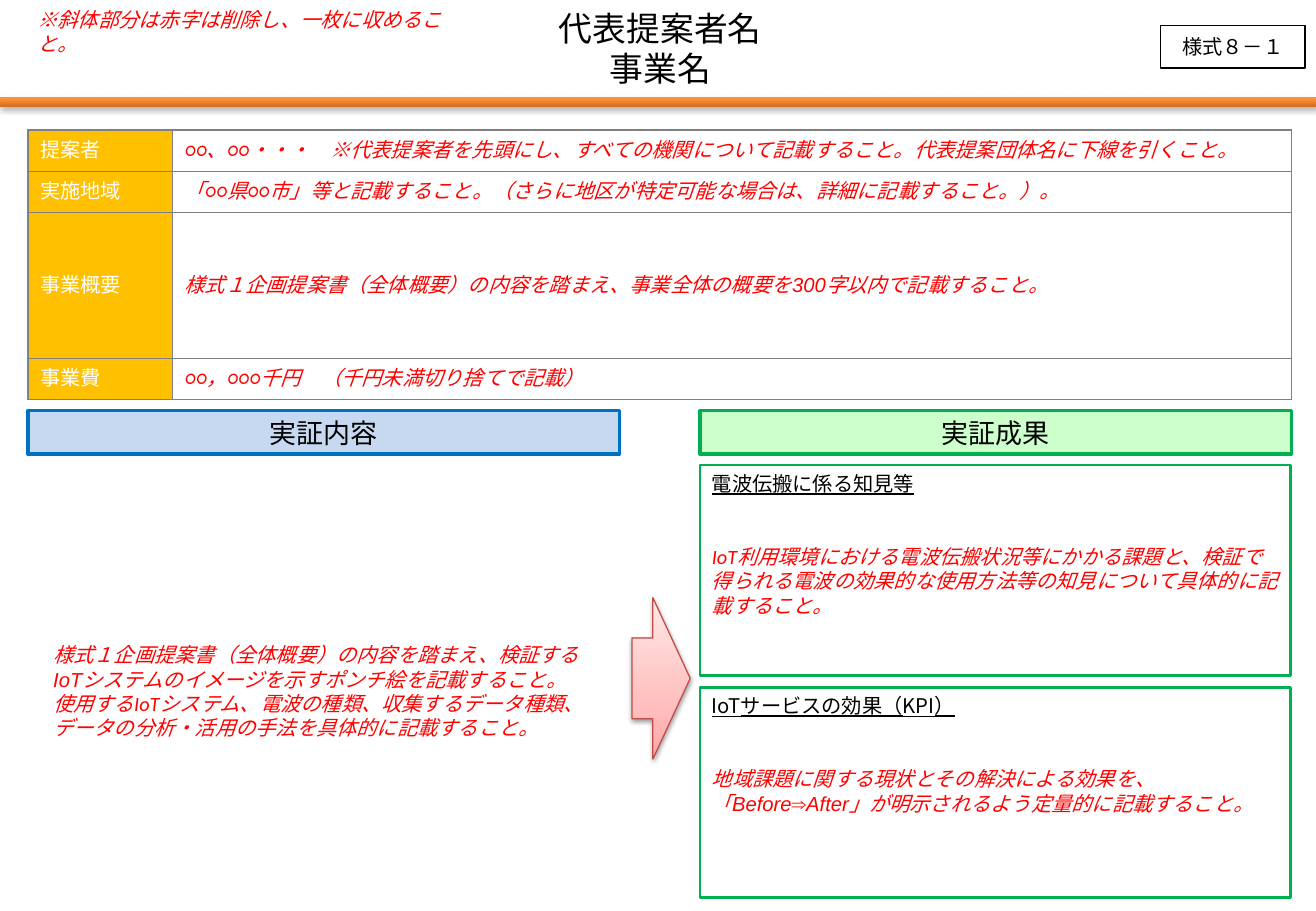
from dataclasses import dataclass
from typing import NamedTuple

from lxml.etree import SubElement
from pptx import Presentation
from pptx.dml.color import RGBColor
from pptx.enum.lang import MSO_LANGUAGE_ID as Language
from pptx.enum.shapes import MSO_SHAPE as ShapeKind
from pptx.enum.text import MSO_ANCHOR as Anchor, MSO_AUTO_SIZE as AutoSize, PP_ALIGN as Align
from pptx.oxml.ns import qn
from pptx.util import Inches, Pt


@dataclass(frozen=True)
class Theme:
    black: str = "000000"
    white: str = "FFFFFF"
    note: str = "FF0000"
    label: str = "FFC000"
    border: str = "808080"
    green: str = "00B050"
    pale_green: str = "CCFFCC"
    blue: str = "0070C0"
    pale_blue: str = "C6D9F1"
    arrow_line: str = "BF4C48"
    bar_stops: tuple = ((0, "CC6E20"), (80, "FF9034"), (100, "FF9136"))
    arrow_stops: tuple = ((0, "FFA6A5"), (35, "FFC0BF"), (100, "FFE7E7"))
    gothic: str = "Noto Sans CJK JP"
    calibri: str = "Calibri"
    arial: str = "Arial"
    title_size: int = 20
    heading_size: int = 16
    body_size: int = 12


THEME = Theme()


class Area(NamedTuple):
    left: float
    top: float
    width: float
    height: float

    def lengths(self) -> list:
        return [Inches(value) for value in self]


class Style(NamedTuple):
    font: str = THEME.gothic
    color: str = THEME.black
    size: int = THEME.body_size
    italic: bool = False
    underline: bool = False


class Run(NamedTuple):
    text: str
    style: Style


class Box(NamedTuple):
    area: Area
    paragraphs: list
    fill: str = THEME.white
    line: str = THEME.black
    line_width: float = 0.75
    anchor: Anchor = Anchor.MIDDLE
    align: Align = Align.CENTER
    gap: float = 0


ARIAL_NOTE = Style(THEME.arial, THEME.note, italic=True)
CALIBRI_NOTE = Style(THEME.calibri, THEME.note, italic=True)
LABEL = Style(color=THEME.white)
HEADING = Style(size=THEME.heading_size)
PANEL_TITLE = Style(underline=True)


def rgb(color: str) -> RGBColor:
    return RGBColor.from_string(color)


def write(frame, paragraphs: list, align: Align = Align.LEFT, gap: float = 0) -> None:
    frame.word_wrap = True
    for index, runs in enumerate(paragraphs):
        paragraph = frame.paragraphs[0] if index == 0 else frame.add_paragraph()
        paragraph.alignment = align
        paragraph.space_before = Pt(gap if index else 0)
        for text, style in runs:
            run = paragraph.add_run()
            run.text = text
            formats = {"name": style.font, "size": Pt(style.size), "bold": False,
                       "italic": style.italic, "underline": style.underline,
                       "language_id": Language.JAPANESE}
            for name, value in formats.items():
                setattr(run.font, name, value)
            run.font.color.rgb = rgb(style.color)
            east_asian = SubElement(run._r.get_or_add_rPr(), qn("a:ea"))
            east_asian.set("typeface", THEME.calibri)


def add_box(slide, box: Box) -> None:
    shape = slide.shapes.add_shape(ShapeKind.RECTANGLE, *box.area.lengths())
    shape.shadow.inherit = False
    shape.fill.solid()
    shape.fill.fore_color.rgb = rgb(box.fill)
    shape.line.color.rgb = rgb(box.line)
    shape.line.width = Pt(box.line_width)
    shape.text_frame.vertical_anchor = box.anchor
    write(shape.text_frame, box.paragraphs, box.align, box.gap)


def add_note(slide, area: Area, paragraphs: list) -> None:
    frame = slide.shapes.add_textbox(*area.lengths()).text_frame
    write(frame, paragraphs)


def add_color(parent, color: str):
    element = SubElement(parent, qn("a:srgbClr"))
    element.set("val", color)
    return element


def add_gradient_shape(slide, kind: ShapeKind, area: Area, stops: tuple, opacity: int):
    shape = slide.shapes.add_shape(kind, *area.lengths())
    shape.shadow.inherit = False
    shape.fill.gradient()
    shape.fill.gradient_angle = 90
    properties = shape._element.spPr
    stop_list = properties.find(".//" + qn("a:gsLst"))
    stop_list.clear()
    for position, color in stops:
        stop = SubElement(stop_list, qn("a:gs"))
        stop.set("pos", str(position * 1000))
        add_color(stop, color)
    shadow = SubElement(properties.find(qn("a:effectLst")), qn("a:outerShdw"))
    for name, value in {"blurRad": Pt(3.1), "dist": Pt(1.7), "dir": 5400000, "rotWithShape": 0}.items():
        shadow.set(name, str(value))
    SubElement(add_color(shadow, THEME.black), qn("a:alpha")).set("val", str(opacity * 1000))
    return shape


def format_cell(cell, runs: list, fill: str, align: Align) -> None:
    properties = cell._tc.get_or_add_tcPr()
    for side in ("a:lnL", "a:lnR", "a:lnT", "a:lnB"):
        line = SubElement(properties, qn(side))
        line.set("w", str(Pt(1)))
        add_color(SubElement(line, qn("a:solidFill")), THEME.border)
    cell.fill.solid()
    cell.fill.fore_color.rgb = rgb(fill)
    cell.vertical_anchor = Anchor.MIDDLE
    write(cell.text_frame, [runs], align)


def add_summary(slide, area: Area, columns: tuple, rows: list) -> None:
    table = slide.shapes.add_table(len(rows), len(columns), *area.lengths()).table
    table.first_row = table.horz_banding = False
    for column, width in zip(table.columns, columns):
        column.width = Inches(width)
    for index, (height, label, runs) in enumerate(rows):
        table.rows[index].height = Inches(height)
        format_cell(table.cell(index, 0), [Run(label, LABEL)], THEME.label, Align.JUSTIFY)
        format_cell(table.cell(index, 1), runs, THEME.white, Align.LEFT)


SUMMARY_ROWS = [
    (0.34, "提案者", [Run("○○、○○・・・　※代表提案者を先頭にし、すべての機関について記載すること。代表提案団体名に下線を引くこと。", ARIAL_NOTE)]),
    (0.34, "実施地域", [Run("「○○県○○市」等と記載", CALIBRI_NOTE), Run("すること。", ARIAL_NOTE),
                    Run("（さらに地区が特定可能な場合は、詳細に記載", CALIBRI_NOTE),
                    Run("すること。", ARIAL_NOTE), Run("）。", CALIBRI_NOTE)]),
    (1.2, "事業概要", [Run("様式１企画提案書（全体概要）の内容を踏まえ、事業全体の概要を300字以内で記載すること。", ARIAL_NOTE)]),
    (0.34, "事業費", [Run("○○，○○○千円　（千円未満切り捨てで記載）", CALIBRI_NOTE)]),
]
PANELS = [
    (3.83, "電波伝搬に係る知見等", Run("IoT利用環境における電波伝搬状況等にかかる課題と、検証で得られる電波の効果的な使用方法等の知見について具体的に記載すること。", CALIBRI_NOTE)),
    (5.66, "IoTサービスの効果（KPI）", Run("地域課題に関する現状とその解決による効果を、「Before⇒After」が明示されるよう定量的に記載すること。", ARIAL_NOTE)),
]
HEADINGS = [
    (0.23, "実証内容", THEME.pale_blue, THEME.blue),
    (5.76, "実証成果", THEME.pale_green, THEME.green),
]


def main() -> None:
    presentation = Presentation()
    presentation.slide_width, presentation.slide_height = Inches(10.83), Inches(7.5)
    slide = presentation.slides.add_slide(presentation.slide_layouts[5])

    # Title band
    title = slide.shapes.title
    for name, value in zip(("left", "top", "width", "height"), Area(0.04, 0.01, 10.79, 0.78).lengths()):
        setattr(title, name, value)
    title.text_frame.auto_size = AutoSize.NONE
    title.text_frame.vertical_anchor = Anchor.TOP
    title_style = Style(size=THEME.title_size)
    write(title.text_frame, [[Run("代表提案者名", title_style)], [Run("事業名", title_style)]], Align.CENTER)
    bar = add_gradient_shape(slide, ShapeKind.RECTANGLE, Area(0, 0.8, 10.83, 0.08), THEME.bar_stops, 35)
    bar.line.fill.background()
    add_box(slide, Box(Area(9.55, 0.21, 1.19, 0.35), [[Run("様式８－１", Style(THEME.calibri))]]))
    add_note(slide, Area(0.21, 0.01, 3.64, 0.3), [[Run("※斜体部分は赤字は削除し、一枚に収めること。", CALIBRI_NOTE)]])

    # Proposal summary
    add_summary(slide, Area(0.23, 1.07, 10.4, 2.22), (1.19, 9.21), SUMMARY_ROWS)

    # Contents, arrow and results
    for left, text, fill, line in HEADINGS:
        add_box(slide, Box(Area(left, 3.38, 4.87, 0.36), [[Run(text, HEADING)]], fill, line, 2))
    add_note(slide, Area(0.34, 5.24, 4.53, 0.91), [
        [Run("様式１企画提案書（全体概要）の内容を踏まえ、検証するIoTシステムのイメージを示すポンチ絵を記載すること。", ARIAL_NOTE)],
        [Run("使用するIoTシステム、電波の種類、収集するデータ種類、データの分析・活用の手法を具体的に記載すること。", CALIBRI_NOTE)],
    ])
    arrow = add_gradient_shape(slide, ShapeKind.RIGHT_ARROW, Area(5.2, 4.92, 0.48, 1.33), THEME.arrow_stops, 38)
    arrow.adjustments[1] = 0.64
    arrow.line.color.rgb = rgb(THEME.arrow_line)
    arrow.line.width = Pt(0.75)
    for top, heading, guidance in PANELS:
        add_box(slide, Box(Area(5.76, top, 4.86, 1.73), [[Run(heading, PANEL_TITLE)], [guidance]],
                           line=THEME.green, line_width=1.5, anchor=Anchor.TOP, align=Align.LEFT, gap=29))

    presentation.save("out.pptx")


if __name__ == "__main__":
    main()
